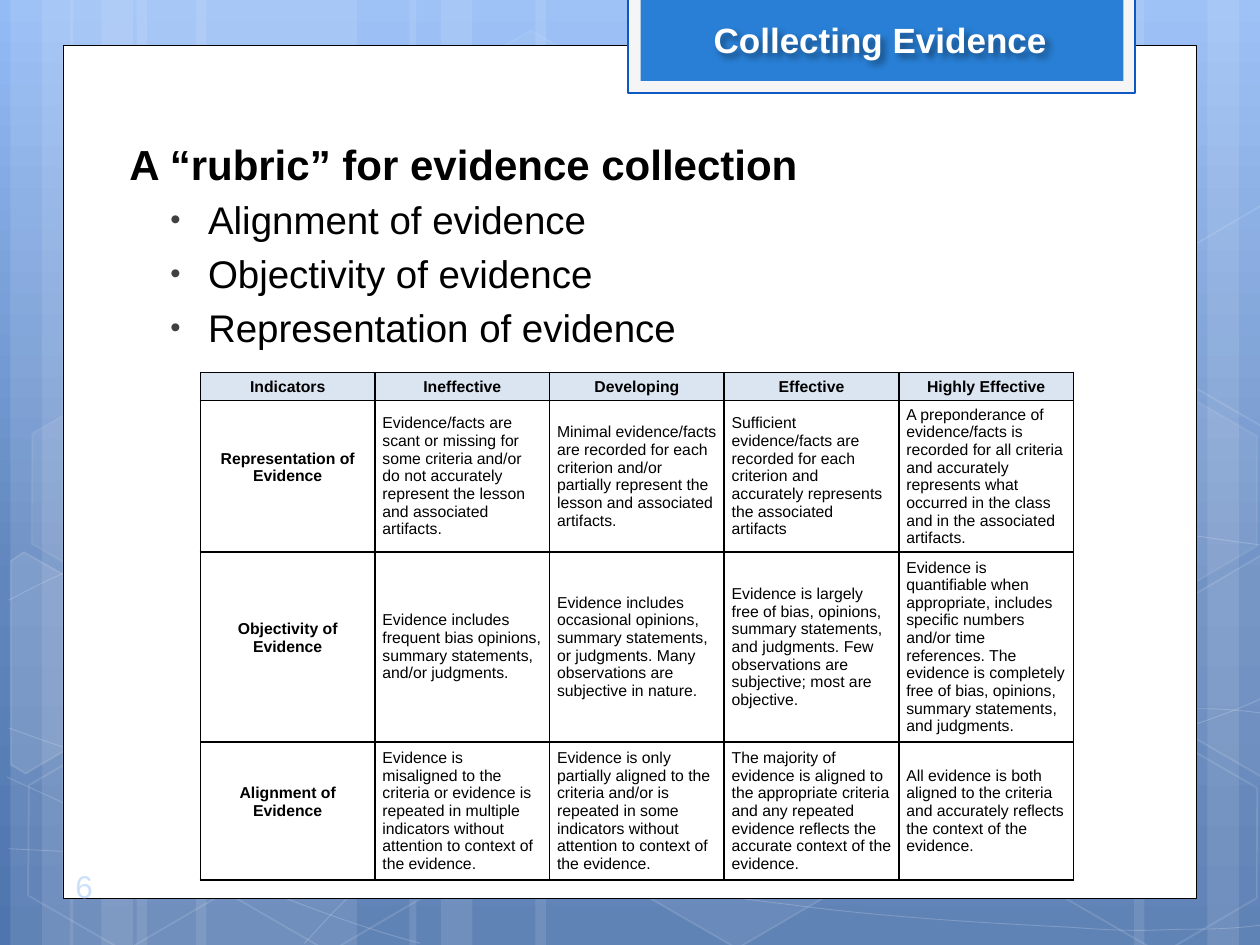
from math import cos, radians, sin

from lxml.etree import SubElement
from pptx import Presentation
from pptx.dml.color import RGBColor
from pptx.enum.shapes import MSO_SHAPE
from pptx.enum.text import MSO_ANCHOR, MSO_AUTO_SIZE, PP_ALIGN
from pptx.oxml import parse_xml
from pptx.oxml.ns import nsdecls, qn
from pptx.util import Pt

WHITE = RGBColor(0xFF, 0xFF, 0xFF)
BLACK = RGBColor(0x00, 0x00, 0x00)
FRAME_GREY = RGBColor(0xF5, 0xF5, 0xF5)
FRAME_BLUE = RGBColor(0x0E, 0x58, 0xC4)
TAB_BLUE = RGBColor(0x29, 0x7F, 0xD5)
NUMBER_BLUE = RGBColor(0xCD, 0xE0, 0xFB)
HEADER_BLUE = RGBColor(0xDB, 0xE5, 0xF1)
BULLET_GREY = RGBColor(0x40, 0x40, 0x40)
SKY = [(0, RGBColor(0x93, 0xBB, 0xF6)), (62, RGBColor(0x61, 0x86, 0xBE)),
       (100, RGBColor(0x4F, 0x75, 0xAE))]
TILT = 30

# Translucent vertical bars: left, width
BARS = [(78, 126), (6, 36), (24, 60), (112, 126), (40, 36), (58, 60), (528, 126),
        (690, 36), (648, 60), (306, 222), (234, 36), (252, 60)]

# Hexagons: left, top, fill opacity, line opacity
HEXAGONS = [(240.5, 26, 4, 8), (358, 424, 6, 12), (8, 425.5, 0, 12),
            (10, 224.5, 7, 8), (125, 426, 0, 12), (542, 326, 10, 12),
            (600.5, 427, 0, 12), (600.5, 226, 7, 8)]

# Hexagons cut by the page edge: fill opacity, centre, corners
CUT_HEXAGONS = [
    (10, (26, 385), [(6, 320.5), (13.5, 315.5), (69, 347), (68.5, 410.5), (14.5, 442), (6, 437)]),
    (4, (709, 374.5), [(667, 349), (720.5, 317.5), (726.5, 321), (726.5, 441.5), (721.5, 444),
                       (667, 412.5)]),
    (0, (709, 173.5), [(667, 149), (720.5, 117.5), (726.5, 121), (726.5, 241), (721.5, 244),
                       (667, 212.5)]),
]

# Cubic curves: a start, then two controls and an end for each piece
CURVES = [
    [(5, 485), (44, 487), (83, 489), (137, 488), (191, 487), (258, 486), (330, 479),
     (402, 472), (504, 458), (570, 444), (636, 431), (703, 409), (725, 397)],
    [(5, 343), (26, 332), (47, 321), (87, 310), (128, 300), (186, 284), (250, 279),
     (314, 274), (392, 273), (471, 279), (550, 284), (682, 307), (725, 312)],
    [(4, 444), (91, 484), (178, 523), (240, 539)],
    [(5, 416), (27, 424), (50, 432), (92, 444), (134, 454), (197, 472), (257, 485),
     (317, 497), (392, 510), (452, 517), (512, 525), (576, 528), (614, 530),
     (652, 533), (662, 531), (680, 531), (699, 531), (712, 530), (725, 528)],
    [(174, 539), (187, 525), (200, 510), (217, 498), (235, 485), (259, 470), (279, 460),
     (300, 450), (312, 446), (338, 438), (364, 431), (413, 421), (438, 416),
     (464, 411), (467, 411), (490, 410), (512, 408), (549, 405), (572, 405),
     (597, 404), (638, 405), (638, 405), (654, 405), (670, 405), (686, 405),
     (699, 405), (711, 406), (724, 408)],
]

BULLETS = ["Alignment of evidence", "Objectivity of evidence", "Representation of evidence"]
ROW_HEIGHTS = [16, 86.5, 108.5, 79]
RUBRIC = [
    ["Indicators", "Ineffective", "Developing", "Effective", "Highly Effective"],
    ["Representation of Evidence",
     "Evidence/facts are scant or missing for some criteria and/or do not accurately represent the lesson and associated artifacts.",
     "Minimal evidence/facts are recorded for each criterion and/or partially represent the lesson and associated artifacts.",
     "Sufficient evidence/facts are recorded for each criterion and accurately represents the associated artifacts",
     "A preponderance of evidence/facts is recorded for all criteria and accurately represents what occurred in the class and in the associated artifacts."],
    ["Objectivity of Evidence",
     "Evidence includes frequent bias opinions, summary statements, and/or judgments.",
     "Evidence includes occasional opinions, summary statements, or judgments. Many observations are subjective in nature.",
     "Evidence is largely free of bias, opinions, summary statements, and judgments. Few observations are subjective; most are objective.",
     "Evidence is quantifiable when appropriate, includes specific numbers and/or time references. The evidence is completely free of bias, opinions, summary statements, and judgments."],
    ["Alignment of Evidence",
     "Evidence is misaligned to the criteria or evidence is repeated in multiple indicators without attention to context of the evidence.",
     "Evidence is only partially aligned to the criteria and/or is repeated in some indicators without attention to context of the evidence.",
     "The majority of evidence is aligned to the appropriate criteria and any repeated evidence reflects the accurate context of the evidence.",
     "All evidence is both aligned to the criteria and accurately reflects the context of the evidence."],
]


def set_all(target, values):
    for name, value in values.items():
        setattr(target, name, value)


def set_opacity(shape, tags, percent):
    color = shape.element.spPr.find("/".join(map(qn, tags)))
    SubElement(color, qn("a:alpha"), val=str(percent * 1000))


def paint(shape, fill=None, line=None, width=1, fill_opacity=100, line_opacity=100):
    shape.shadow.inherit = False
    if fill is None or fill_opacity == 0:
        shape.fill.background()
    else:
        shape.fill.solid()
        shape.fill.fore_color.rgb = fill
        set_opacity(shape, ["a:solidFill", "a:srgbClr"], fill_opacity)
    if line is None:
        shape.line.fill.background()
    else:
        shape.line.color.rgb = line
        shape.line.width = Pt(width)
        set_opacity(shape, ["a:ln", "a:solidFill", "a:srgbClr"], line_opacity)


def add_box(page, kind, place, **style):
    box = page.shapes.add_shape(kind, *map(Pt, place))
    paint(box, **style)
    return box


def add_outline(page, points, close, **style):
    corners = [(Pt(x), Pt(y)) for x, y in points]
    builder = page.shapes.build_freeform(*corners[0])
    builder.add_line_segments(corners[1:], close=close)
    outline = builder.convert_to_shape()
    paint(outline, **style)
    return outline


def add_curve(page, points, **style):
    """Draw the points as an outline, then join each three into a cubic piece."""
    curve = add_outline(page, points, False, **style)
    lines = list(curve.element.iter(qn("a:lnTo")))
    for first in range(0, len(lines), 3):
        piece = lines[first].makeelement(qn("a:cubicBezTo"))
        lines[first].addprevious(piece)
        for line in lines[first:first + 3]:
            piece.append(line[0])
            line.getparent().remove(line)


def untilt(points, center):
    c, s = cos(radians(TILT)), sin(radians(TILT))
    offsets = [(x - center[0], y - center[1]) for x, y in points]
    return [(center[0] + x * c + y * s, center[1] + y * c - x * s) for x, y in offsets]


def write(para, text, size, color=BLACK, bold=False):
    span = para.add_run()
    span.text = text
    set_all(span.font, {"size": Pt(size), "name": "Arial", "bold": bold})
    span.font.color.rgb = color


def place_front(shape, left, top, width, height):
    set_all(shape, {"left": Pt(left), "top": Pt(top), "width": Pt(width), "height": Pt(height)})
    shape.element.getparent().append(shape.element)
    set_all(shape.text_frame, {"word_wrap": True, "auto_size": MSO_AUTO_SIZE.NONE})


def add_background(page):
    page.background.fill.gradient()
    page.background.fill.gradient_angle = 270
    stops = page.element.find(".//" + qn("a:gsLst"))
    for stop in list(stops):
        stops.remove(stop)
    for position, color in SKY:
        stop = SubElement(stops, qn("a:gs"), pos=str(position * 1000))
        SubElement(stop, qn("a:srgbClr"), val=str(color))
    for left, width in BARS:
        add_box(page, MSO_SHAPE.RECTANGLE, (left, 0, width, 540), fill=WHITE, fill_opacity=10)
    for points in CURVES:
        add_curve(page, points, line=WHITE, width=0.5, line_opacity=20)
    for left, top, fill_opacity, line_opacity in HEXAGONS:
        hexagon = add_box(page, MSO_SHAPE.HEXAGON, (left, top, 126, 109.5), fill=WHITE,
                          line=WHITE, fill_opacity=fill_opacity, line_opacity=line_opacity)
        hexagon.rotation = TILT
        hexagon.adjustments[0] = 0.285
    for fill_opacity, center, corners in CUT_HEXAGONS:
        hexagon = add_outline(page, untilt(corners, center), True, fill=WHITE, line=WHITE,
                              fill_opacity=fill_opacity, line_opacity=12)
        hexagon.rotation = TILT


def add_title(page):
    title = page.shapes.title
    place_front(title, 373, 6.8, 260, 31.7)
    title.text_frame.vertical_anchor = MSO_ANCHOR.MIDDLE
    para = title.text_frame.paragraphs[0]
    para.alignment = PP_ALIGN.CENTER
    write(para, "Collecting Evidence", 20, WHITE, True)
    # Soft shadow under the letters
    title.fill.background()
    title.element.spPr.append(parse_xml(
        f'<a:effectLst {nsdecls("a")}><a:outerShdw blurRad="50800" dist="38100" dir="2700000">'
        '<a:srgbClr val="000000"><a:alpha val="40000"/></a:srgbClr></a:outerShdw></a:effectLst>'))


def set_indent(layout, margin, indent):
    layout.set("marL", str(Pt(margin)))
    layout.set("indent", str(Pt(indent)))


def add_list(page):
    body = page.placeholders[1]
    place_front(body, 61.3, 75.5, 597, 402.5)
    heading = body.text_frame.paragraphs[0]
    write(heading, "A “rubric” for evidence collection", 24, bold=True)
    layout = heading._p.get_or_add_pPr()
    set_indent(layout, 5.4, 0)
    SubElement(layout, qn("a:buNone"))
    for text in BULLETS:
        para = body.text_frame.add_paragraph()
        para.level = 1
        write(para, text, 22)
        layout = para._p.get_or_add_pPr()
        set_indent(layout, 50.4, -21.6)
        color = SubElement(layout, qn("a:buClr"))
        SubElement(color, qn("a:srgbClr"), val=str(BULLET_GREY))
        SubElement(layout, qn("a:buSzPct"), val="76000")
        SubElement(layout, qn("a:buFont"), typeface="Arial")
        SubElement(layout, qn("a:buChar"), char="•")


def add_borders(cell):
    properties = cell._tc.get_or_add_tcPr()
    for index, side in enumerate("LRTB"):
        properties.insert(index, parse_xml(
            f'<a:ln{side} {nsdecls("a")} w="{Pt(1)}"><a:solidFill>'
            f'<a:srgbClr val="{BLACK}"/></a:solidFill></a:ln{side}>'))


def add_rubric(page):
    table = page.shapes.add_table(len(RUBRIC), len(RUBRIC[0]), Pt(114.5), Pt(213),
                                  Pt(499), Pt(sum(ROW_HEIGHTS))).table
    set_all(table, {"first_row": False, "horz_banding": False})
    for row, (height, texts) in enumerate(zip(ROW_HEIGHTS, RUBRIC)):
        table.rows[row].height = Pt(height)
        for column, text in enumerate(texts):
            cell = table.cell(row, column)
            header, label = row == 0, row > 0 and column == 0
            set_all(cell, {"margin_left": Pt(4.3), "margin_right": Pt(4.3), "margin_top": 0,
                           "margin_bottom": Pt(10.3 if label else 0),
                           "vertical_anchor": MSO_ANCHOR.MIDDLE})
            if header:
                cell.fill.solid()
                cell.fill.fore_color.rgb = HEADER_BLUE
            else:
                cell.fill.background()
            add_borders(cell)
            para = cell.text_frame.paragraphs[0]
            para.alignment = PP_ALIGN.CENTER if header or label else PP_ALIGN.LEFT
            write(para, text, 9, bold=header or label)


def main():
    deck = Presentation()
    set_all(deck, {"slide_width": Pt(720), "slide_height": Pt(540)})
    page = deck.slides.add_slide(deck.slide_layouts[1])
    add_background(page)
    # White panel and title tab
    add_box(page, MSO_SHAPE.RECTANGLE, (36, 26, 648, 487.3), fill=WHITE, line=BLACK, width=0.5)
    add_box(page, MSO_SHAPE.RECTANGLE, (359, -1.5, 289.5, 54.5), fill=FRAME_GREY,
            line=FRAME_BLUE, width=1.25)
    add_box(page, MSO_SHAPE.RECTANGLE, (366, -3, 276, 49.3), fill=TAB_BLUE)
    # Words, page number and table
    add_list(page)
    number = page.shapes.add_textbox(Pt(36), Pt(492), Pt(318), Pt(36))
    write(number.text_frame.paragraphs[0], "6", 18, NUMBER_BLUE)
    add_title(page)
    add_rubric(page)
    deck.save("out.pptx")


if __name__ == "__main__":
    main()
